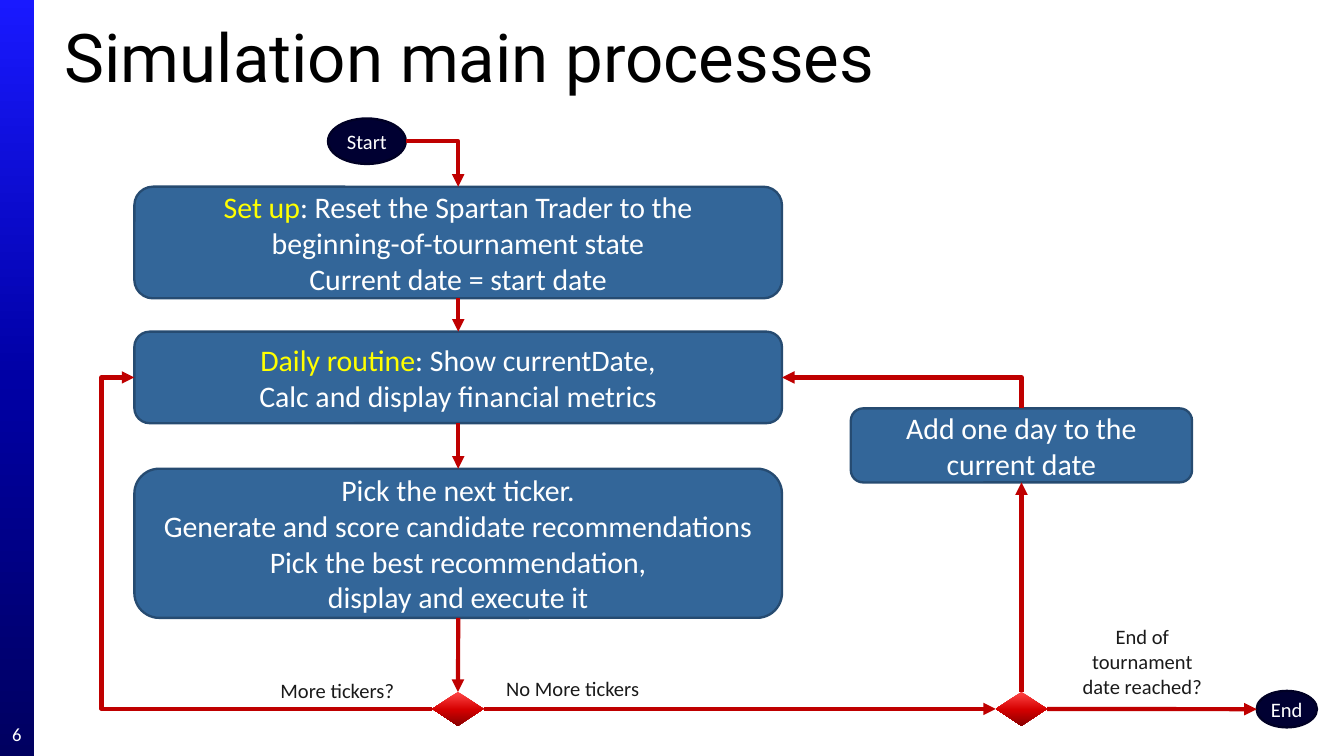
"""Build the flowchart slide of the simulation's main processes."""
from copy import deepcopy
from dataclasses import dataclass
from typing import Optional

from lxml.etree import SubElement
from pptx import Presentation
from pptx.dml.color import RGBColor
from pptx.enum.shapes import MSO_CONNECTOR, MSO_SHAPE
from pptx.enum.text import MSO_ANCHOR, MSO_AUTO_SIZE, PP_ALIGN
from pptx.oxml.ns import qn
from pptx.util import Cm, Pt


@dataclass(frozen=True)
class Theme:
    body: str = "Calibri"
    head: str = "Roboto"
    title_size: int = 36
    box_size: int = 16
    label_size: int = 11
    number_size: int = 10
    white: str = "FFFFFF"
    black: str = "000000"
    ink: str = "1A1A1A"
    accent: str = "FFFF00"
    box: str = "336699"
    box_line: str = "264B71"
    end: str = "000032"
    end_line: str = "000025"
    arrow: str = "BF0000"
    bar: tuple = ((0, "1919FF"), (0.5, "0000A5"), (1, "000060"))
    diamond: tuple = ((0, "FF4747"), (0.52, "D50000"), (1, "890000"))


T = Theme()


@dataclass(frozen=True)
class Box:
    x: float
    y: float
    w: float
    h: float
    text: str = ""
    lead: str = ""

    @property
    def left(self):
        return self.x, self.y + self.h / 2

    @property
    def right(self):
        return self.x + self.w, self.y + self.h / 2

    @property
    def top(self):
        return self.x + self.w / 2, self.y

    @property
    def bottom(self):
        return self.x + self.w / 2, self.y + self.h

    def lengths(self):
        return [Cm(v) for v in (self.x, self.y, self.w, self.h)]


BAR = Box(0, 0, 0.64, 14.29)
NUMBER = Box(0, 13.49, 0.64, 0.76, "6")
TITLE = Box(0.97, 0.38, 24.33, 1.35, "Simulation main processes")
SETUP = Box(2.54, 3.53, 12.24, 2.11, ": Reset the Spartan Trader to the\v"
            "beginning-of-tournament state\nCurrent date = start date", "Set up")
DAILY = Box(2.54, 6.27, 12.24, 1.73, ": Show currentDate,\n"
            "Calc and display financial metrics", "Daily routine")
PICK = Box(2.54, 8.86, 12.24, 2.82, "Pick the next ticker.\v"
           "Generate and score candidate recommendations\n"
           "Pick the best recommendation,\vdisplay and execute it")
ADD_DAY = Box(16.08, 7.72, 6.45, 1.4, "Add one day to the current date")
START = Box(6.2, 2.24, 1.47, 0.86, "Start")
END = Box(23.75, 13.06, 1.14, 0.69, "End")
TICKERS_LEFT = Box(8.17, 13.08, 0.97, 0.64)
DATE_REACHED = Box(18.82, 13.08, 0.97, 0.64)
LABELS = (
    Box(5.08, 12.8, 2.59, 0.48, "More tickers?"),
    Box(9.53, 12.78, 2.59, 0.48, "No More tickers"),
    Box(20.27, 11.79, 2.64, 1.42, "End of tournament date reached?"),
)


def write(tf, text: str, *, lead: str = "", size: int = T.label_size, font: str = T.body,
          color: str = T.white, align=PP_ALIGN.CENTER, inset: Optional[float] = 0) -> None:
    tf.word_wrap, tf.auto_size = True, MSO_AUTO_SIZE.NONE
    tf.vertical_anchor = MSO_ANCHOR.MIDDLE
    if inset is not None:
        tf.margin_left = tf.margin_right = tf.margin_top = tf.margin_bottom = Cm(inset)
    for i, para in enumerate(text.split("\n")):
        p = tf.add_paragraph() if i else tf.paragraphs[0]
        p.alignment = align
        runs = [(lead, T.accent)] if lead and not i else []
        runs += [(line, color) for line in para.split("\v")]
        for j, (words, shade) in enumerate(runs):
            if j and runs[j - 1][1] == color:
                p.add_line_break()
            r = p.add_run()
            r.text = words
            r.font.size, r.font.name = Pt(size), font
            r.font.color.rgb = RGBColor.from_string(shade)
        for br in p._p.findall(qn("a:br")):
            SubElement(br, qn("a:rPr"), sz=str(size * 100))


def add_shape(s, kind, box: Box, fill, line: Optional[str] = None, **fmt):
    sp = s.shapes.add_shape(kind, *box.lengths())
    sp.shadow.inherit = False
    if isinstance(fill, str):
        sp.fill.solid()
        sp.fill.fore_color.rgb = RGBColor.from_string(fill)
    else:
        shade_down(sp, fill)
    if line:
        sp.line.color.rgb = RGBColor.from_string(line)
        sp.line.width = Pt(1.25)
    else:
        sp.line.fill.background()
    if box.text:
        write(sp.text_frame, box.text, lead=box.lead, **fmt)
    return sp


def shade_down(sp, stops: tuple) -> None:
    sp.fill.gradient()
    sp.fill.gradient_angle = 270
    gs = sp._element.spPr.find(".//" + qn("a:gsLst"))
    gs.append(deepcopy(gs[-1]))
    for stop, (pos, color) in zip(sp.fill.gradient_stops, stops):
        stop.position = pos
        stop.color.rgb = RGBColor.from_string(color)


def add_arrow(s, start: tuple, end: tuple, kind=MSO_CONNECTOR.STRAIGHT,
              preset: str = "", adj: Optional[float] = None, tip: str = "a:tailEnd") -> None:
    c = s.shapes.add_connector(kind, *[Cm(v) for v in (*start, *end)])
    c.line.color.rgb = RGBColor.from_string(T.arrow)
    c.line.width = Pt(2.25)
    pr = c._element.spPr
    SubElement(pr.find(qn("a:ln")), qn(tip), type="triangle")
    SubElement(pr, qn("a:effectLst"))
    geom = pr.find(qn("a:prstGeom"))
    if preset:
        geom.set("prst", preset)
    if adj is not None:
        SubElement(geom.find(qn("a:avLst")), qn("a:gd"), name="adj1",
                   fmla=f"val {round(adj * 100000)}")


def main() -> None:
    prs = Presentation()
    prs.slide_width, prs.slide_height = Cm(25.4), Cm(14.29)
    s = prs.slides.add_slide(prs.slide_layouts[5])

    title = s.shapes.title
    title.left, title.top, title.width, title.height = TITLE.lengths()
    write(title.text_frame, TITLE.text, size=T.title_size, font=T.head,
          color=T.black, align=PP_ALIGN.LEFT, inset=None)
    add_shape(s, MSO_SHAPE.RECTANGLE, BAR, T.bar)
    number = s.shapes.add_textbox(*NUMBER.lengths())
    write(number.text_frame, NUMBER.text, size=T.number_size)

    for box in LABELS:
        add_shape(s, MSO_SHAPE.RECTANGLE, box, T.white, color=T.ink)
    for box in (SETUP, DAILY, PICK, ADD_DAY):
        add_shape(s, MSO_SHAPE.ROUNDED_RECTANGLE, box, T.box, T.box_line,
                  size=T.box_size, inset=None)
    for box in (START, END):
        add_shape(s, MSO_SHAPE.OVAL, box, T.end, T.end_line)
    for box in (TICKERS_LEFT, DATE_REACHED):
        add_shape(s, MSO_SHAPE.DIAMOND, box, T.diamond)

    for start, end in (
        (SETUP.bottom, DAILY.top),
        (DAILY.bottom, PICK.top),
        (PICK.bottom, TICKERS_LEFT.top),
        (TICKERS_LEFT.right, DATE_REACHED.left),
        (DATE_REACHED.right, END.left),
        (DATE_REACHED.top, ADD_DAY.bottom),
    ):
        add_arrow(s, start, end)
    elbow = MSO_CONNECTOR.ELBOW
    add_arrow(s, START.right, SETUP.top, elbow, "bentConnector2")
    add_arrow(s, DAILY.right, ADD_DAY.top, elbow, "bentConnector2", tip="a:headEnd")
    add_arrow(s, TICKERS_LEFT.left, DAILY.left, elbow, adj=1.11)
    prs.save("out.pptx")


if __name__ == "__main__":
    main()
